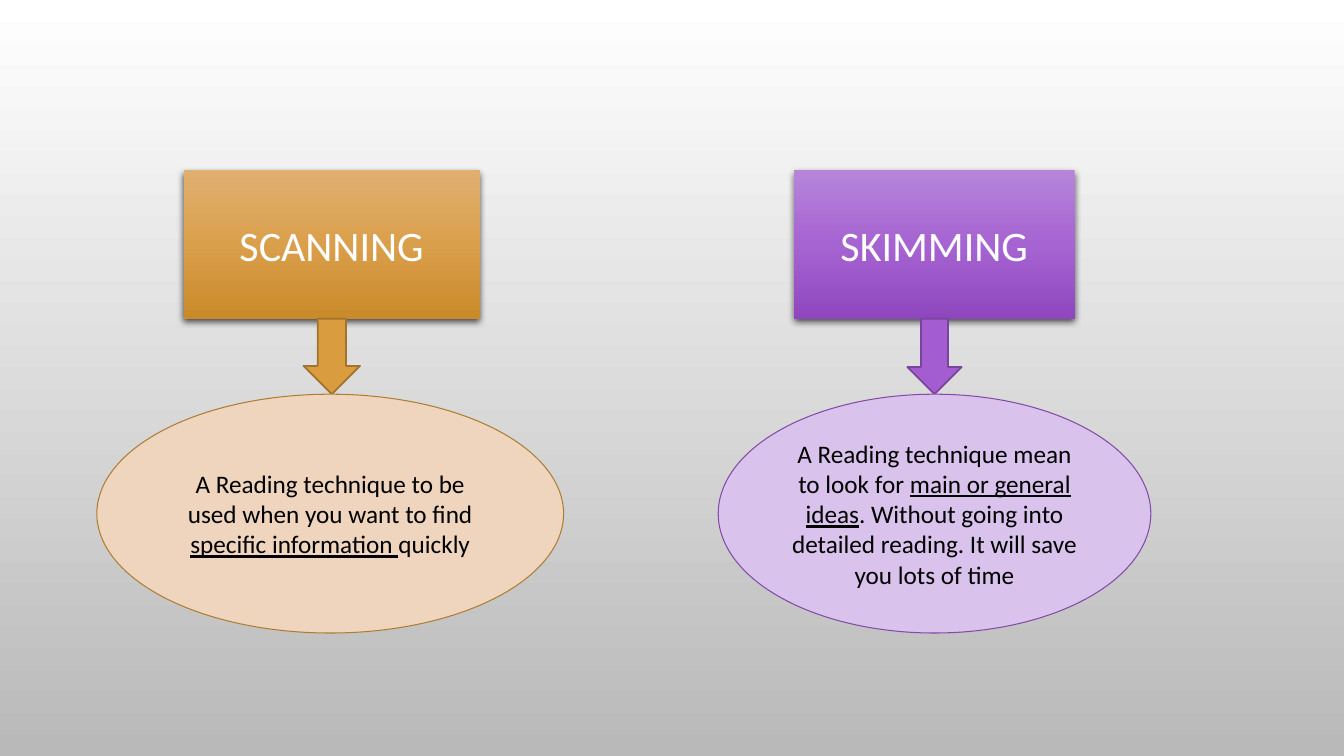
from copy import deepcopy

from lxml import etree
from pptx import Presentation
from pptx.dml.color import RGBColor
from pptx.enum.shapes import MSO_SHAPE
from pptx.enum.text import MSO_ANCHOR, PP_ALIGN
from pptx.oxml.ns import qn
from pptx.util import Pt

RECTANGLE, ARROW, OVAL = MSO_SHAPE.RECTANGLE, MSO_SHAPE.DOWN_ARROW, MSO_SHAPE.OVAL
MIDDLE, CENTER = MSO_ANCHOR.MIDDLE, PP_ALIGN.CENTER

THEME = {
    "font": "Calibri", "heading_size": Pt(30), "body_size": Pt(18),
    "heading": "FFFFFF", "body": "000000", "shadow": "000000",
    "background": ["FFFFFF", "B9B9B9"],
    "orange": {"heading": ["E0B071", "DA9F4B", "C98A29"], "arrow": "D99C3F",
               "arrow_line": "A1732F", "oval": "EFD5BD", "oval_line": "AE7D32"},
    "purple": {"heading": ["B685DA", "A664D2", "8F47BF"], "arrow": "A35DD1",
               "arrow_line": "79459B", "oval": "D9C3EC", "oval_line": "834AA7"},
}

# Left and width of each part, then the definition as (text, underlined) runs
TECHNIQUES = [
    ("SCANNING", "orange", (131.1, 211.7), (216.8, 40.4), (69.2, 333.4),
     [("A Reading technique to be used when you want to find ", False),
      ("specific information ", True), ("quickly", False)]),
    ("SKIMMING", "purple", (567.2, 200.4), (648.1, 38.8), (513, 309),
     [("A Reading technique mean to look for ", False),
      ("main or general ideas", True),
      (". Without going into detailed reading. It will save you lots of time", False)]),
]
HEADING_TOP, ARROW_TOP, OVAL_TOP, OVAL_BOTTOM = 121.6, 227.8, 281.6, 452.2


def fill_downward(fill, colors):
    """Fill with evenly spaced colours from top to bottom."""
    fill.gradient()
    fill.gradient_angle = 270
    stops = fill.gradient_stops[0]._gs.getparent()
    for _ in colors[2:]:
        stops.append(deepcopy(stops[0]))
    for index, (stop, color) in enumerate(zip(fill.gradient_stops, colors)):
        stop.color.rgb = RGBColor.from_string(color)
        stop.position = index / (len(colors) - 1)


def add_part(preset, span, top, bottom, runs=(), size=None, color=None):
    """Add an unshadowed shape with centred text."""
    left, width = span
    part = slide.shapes.add_shape(preset, Pt(left), Pt(top), Pt(width), Pt(bottom - top))
    part.shadow.inherit = False
    if runs:
        part.text_frame.word_wrap = True
        part.text_frame.vertical_anchor = MIDDLE
        paragraph = part.text_frame.paragraphs[0]
        paragraph.alignment = CENTER
        paragraph.font.name = THEME["font"]
        paragraph.font.size = size
        paragraph.font.color.rgb = RGBColor.from_string(color)
        for text, underlined in runs:
            run = paragraph.add_run()
            run.text = text
            if underlined:
                run.font.underline = True
    return part


# Slide and background
prs = Presentation()
prs.slide_width, prs.slide_height = Pt(960), Pt(540)
slide = prs.slides.add_slide(prs.slide_layouts[6])
fill_downward(slide.background.fill, THEME["background"])

for name, hue, heading_span, arrow_span, oval_span, definition in TECHNIQUES:
    colors = THEME[hue]

    # Heading with a soft shadow below
    heading = add_part(RECTANGLE, heading_span, HEADING_TOP, ARROW_TOP,
                       [(name, False)], THEME["heading_size"], THEME["heading"])
    fill_downward(heading.fill, colors["heading"])
    heading.line.fill.background()
    effects = heading._element.spPr.find(qn("a:effectLst"))
    shadow = etree.SubElement(effects, qn("a:outerShdw"), blurRad=str(Pt(5)),
                              dist=str(Pt(2)), dir="5400000", rotWithShape="0")
    shade = etree.SubElement(shadow, qn("a:srgbClr"), val=THEME["shadow"])
    etree.SubElement(shade, qn("a:alpha"), val="69000")

    # Arrow and definition
    arrow = add_part(ARROW, arrow_span, ARROW_TOP, OVAL_TOP)
    oval = add_part(OVAL, oval_span, OVAL_TOP, OVAL_BOTTOM,
                    definition, THEME["body_size"], THEME["body"])
    for part, key, weight in ((arrow, "arrow", 1.25), (oval, "oval", 0.75)):
        part.fill.solid()
        part.fill.fore_color.rgb = RGBColor.from_string(colors[key])
        part.line.color.rgb = RGBColor.from_string(colors[key + "_line"])
        part.line.width = Pt(weight)

prs.save("out.pptx")
